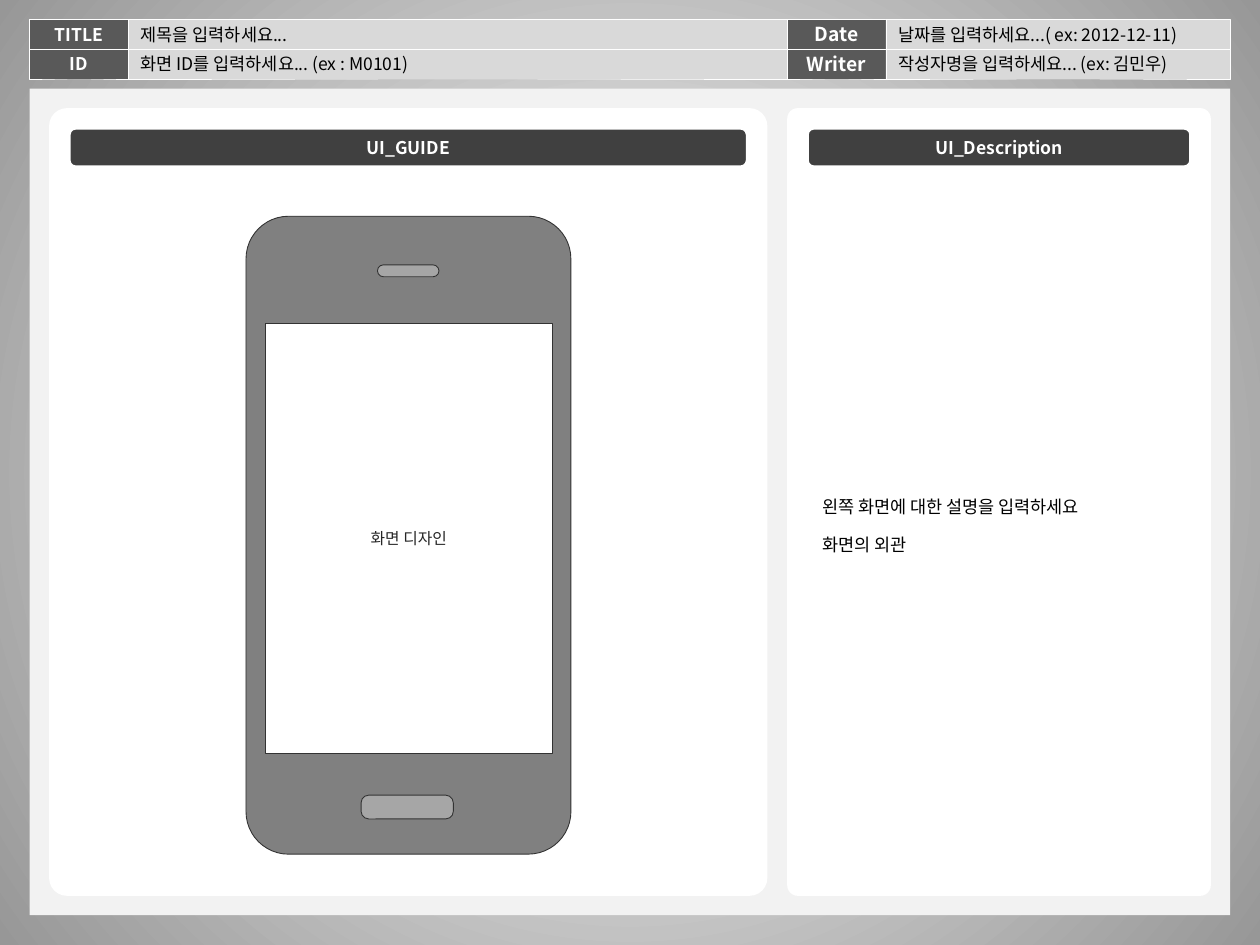
from lxml import etree
from pptx import Presentation
from pptx.dml.color import RGBColor
from pptx.enum.shapes import MSO_SHAPE as Shape
from pptx.enum.text import MSO_ANCHOR as Anchor, PP_ALIGN as Align
from pptx.oxml.ns import qn
from pptx.util import Cm, Pt

FONT = "Noto Sans CJK KR"
BLACK = RGBColor(0x00, 0x00, 0x00)
WHITE = RGBColor(0xFF, 0xFF, 0xFF)
BACKDROP_EDGE = RGBColor(0x97, 0x97, 0x97)
LABEL = RGBColor(0x59, 0x59, 0x59)
FIELD = RGBColor(0xD9, 0xD9, 0xD9)
BOARD = RGBColor(0xF2, 0xF2, 0xF2)
BAR = RGBColor(0x40, 0x40, 0x40)
BODY = RGBColor(0x80, 0x80, 0x80)
BUTTON = RGBColor(0xA6, 0xA6, 0xA6)
OUTLINE = RGBColor(0x33, 0x33, 0x33)
SCREEN_TEXT = RGBColor(0x26, 0x26, 0x26)

HEADER_TOP, ROW_HEIGHT = 0.39, 0.6
LABEL_WIDTH = 1.99
PANEL_TOP, PANEL_HEIGHT = 2.18, 15.88
BAR_INSET, BAR_HEIGHT = 0.4, 0.79


def set_backdrop(slide):
    fill = slide.background.fill
    fill.gradient()
    for stop, color in zip(fill.gradient_stops, (WHITE, BACKDROP_EDGE)):
        stop.color.rgb = color
    grad = next(slide.element.iter(qn("a:gradFill")))
    for lin in grad.findall(qn("a:lin")):
        grad.remove(lin)
    circle = etree.SubElement(grad, qn("a:path"), path="circle")
    center = dict.fromkeys("ltrb", "50000")
    etree.SubElement(circle, qn("a:fillToRect"), center)


def add_box(slide, box, fill, line=None, width=0.5, radius=None):
    kind = Shape.RECTANGLE if radius is None else Shape.ROUNDED_RECTANGLE
    sp = slide.shapes.add_shape(kind, *map(Cm, box))
    sp.shadow.inherit = False
    if radius is not None:
        sp.adjustments[0] = radius
    sp.fill.solid()
    sp.fill.fore_color.rgb = fill
    if line is None:
        sp.line.fill.background()
    else:
        sp.line.color.rgb = line
        sp.line.width = Pt(width)
    return sp


def write(sp, lines, color, size=10, bold=False, align=Align.LEFT, font=FONT, gap=0):
    tf = sp.text_frame
    tf.word_wrap = True
    tf.vertical_anchor = Anchor.MIDDLE
    tf.margin_top = tf.margin_bottom = 0
    tf.text = "\n".join(lines)
    for i, p in enumerate(tf.paragraphs):
        p.alignment = align
        p.space_before = Pt(gap if i else 0)
        p.font.size = Pt(size)
        p.font.bold = bold
        p.font.color.rgb = color
        p.font.name = font
        latin = next(p._p.iter(qn("a:latin")))
        latin.addnext(etree.Element(qn("a:ea"), typeface=FONT))


def add_header_block(slide, left, field_width, label_size, rows):
    for i, (label, hint) in enumerate(rows):
        top = HEADER_TOP + i * ROW_HEIGHT
        sp = add_box(slide, (left, top, LABEL_WIDTH, ROW_HEIGHT), LABEL, WHITE, 0.25)
        write(sp, [label], WHITE, label_size, True, Align.CENTER)
        field = (left + LABEL_WIDTH, top, field_width, ROW_HEIGHT)
        write(add_box(slide, field, FIELD, WHITE, 0.25), [hint], BLACK)


def add_panel(slide, left, width, title):
    add_box(slide, (left, PANEL_TOP, width, PANEL_HEIGHT), WHITE, radius=0.025)
    bar = (left + BAR_INSET, PANEL_TOP + BAR_INSET, width - 2 * BAR_INSET, BAR_HEIGHT)
    sp = add_box(slide, bar, BAR, WHITE, 2, radius=0.167)
    write(sp, [title], WHITE, bold=True, align=Align.CENTER)


def add_phone(slide):
    add_box(slide, (4.96, 4.36, 6.55, 12.86), BODY, OUTLINE, radius=0.131)
    screen = add_box(slide, (5.35, 6.52, 5.78, 8.67), WHITE, OUTLINE)
    write(screen, ["화면 디자인"], SCREEN_TEXT, 9, align=Align.CENTER, font="Calibri")
    add_box(slide, (7.61, 5.34, 1.24, 0.24), BUTTON, OUTLINE, radius=0.5)
    add_box(slide, (7.28, 16.03, 1.86, 0.48), BUTTON, OUTLINE, radius=0.321)


def add_description(slide):
    sp = slide.shapes.add_textbox(Cm(16.33), Cm(3.58), Cm(7.67), Cm(14.02))
    write(sp, ["왼쪽 화면에 대한 설명을 입력하세요", "화면의 외관"], BLACK, gap=9.5)


def main():
    prs = Presentation()
    prs.slide_width, prs.slide_height = Cm(25.4), Cm(19.05)
    slide = prs.slides.add_slide(prs.slide_layouts[6])
    set_backdrop(slide)
    add_header_block(slide, 0.6, 13.28, 10, [
        ("TITLE", "제목을 입력하세요..."),
        ("ID", "화면 ID를 입력하세요... (ex : M0101)"),
    ])
    add_header_block(slide, 15.87, 6.94, 11, [
        ("Date", "날짜를 입력하세요...( ex: 2012-12-11)"),
        ("Writer", "작성자명을 입력하세요... (ex: 김민우)"),
    ])
    add_box(slide, (0.6, 1.79, 24.2, 16.66), BOARD)
    add_panel(slide, 15.87, 8.54, "UI_Description")
    add_description(slide)
    add_panel(slide, 0.99, 14.48, "UI_GUIDE")
    add_phone(slide)
    prs.save("out.pptx")


if __name__ == "__main__":
    main()
